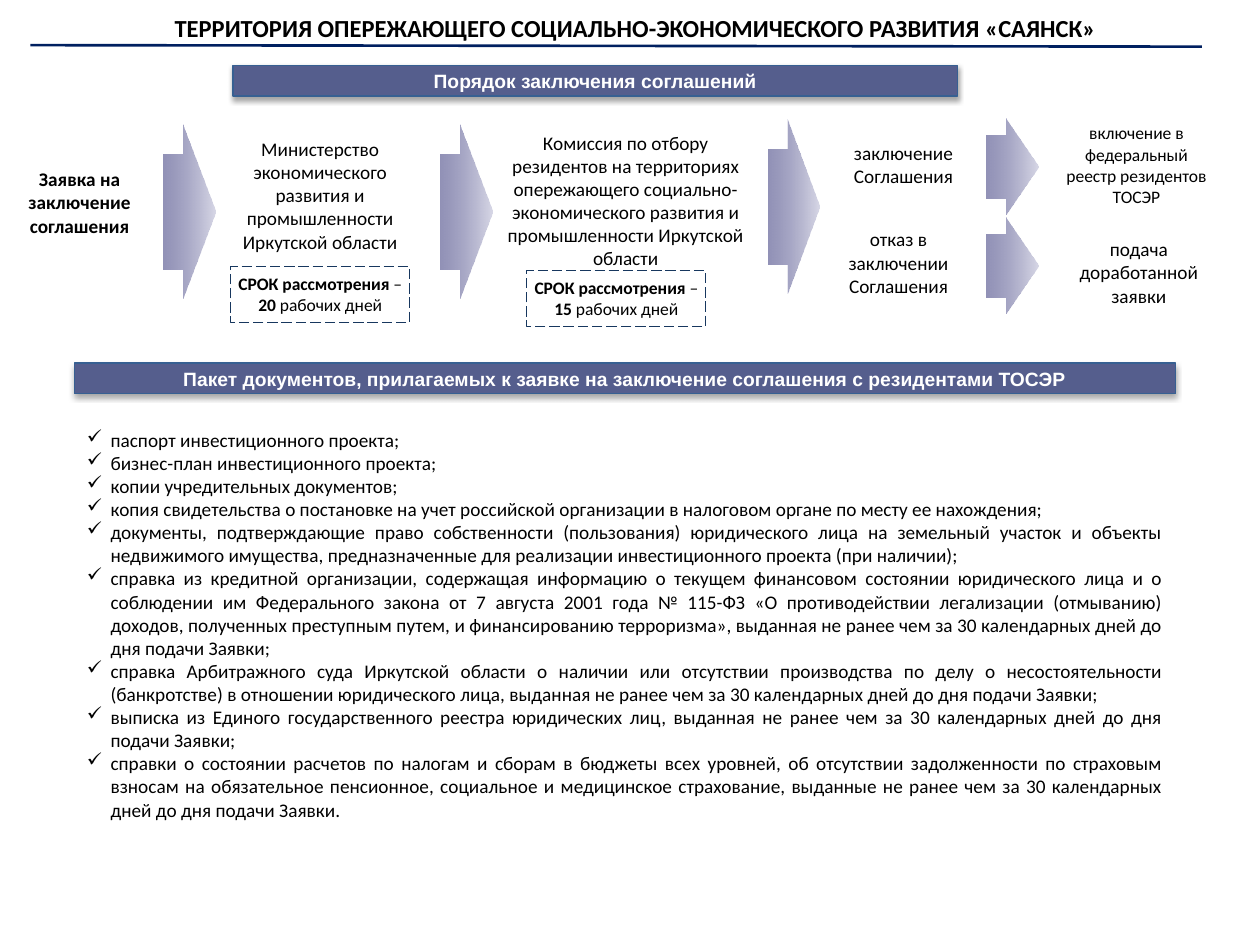
from dataclasses import dataclass

from lxml.etree import SubElement
from pptx import Presentation
from pptx.dml.color import RGBColor
from pptx.enum.dml import MSO_LINE
from pptx.enum.shapes import MSO_CONNECTOR, MSO_SHAPE
from pptx.enum.text import MSO_ANCHOR, PP_ALIGN
from pptx.oxml.ns import qn
from pptx.util import Cm, Pt


@dataclass(frozen=True)
class Theme:
    body_font: str = "Calibri"
    banner_font: str = "Arial"
    text: RGBColor = RGBColor(0x00, 0x00, 0x00)
    white: RGBColor = RGBColor(0xFF, 0xFF, 0xFF)
    rule: RGBColor = RGBColor(0x00, 0x20, 0x60)
    banner: RGBColor = RGBColor(0x55, 0x5E, 0x8D)
    banner_line: RGBColor = RGBColor(0x37, 0x60, 0x92)
    deadline_line: RGBColor = RGBColor(0x17, 0x37, 0x5E)
    arrow_start: RGBColor = RGBColor(0x24, 0x24, 0x6E)
    arrow_end: RGBColor = RGBColor(0xC7, 0xC7, 0xDC)
    title_size: Pt = Pt(14)
    body_size: Pt = Pt(11)
    small_size: Pt = Pt(10)


theme = Theme()
plain = {"name": theme.body_font, "size": theme.body_size, "bold": False}
bold = {**plain, "bold": True}
small = {**plain, "size": theme.small_size}
small_bold = {**small, "bold": True}
title_format = {**bold, "size": theme.title_size}
banner_format = {**bold, "name": theme.banner_font}


def add_run(paragraph, text, font_format, color=theme.text):
    run = paragraph.add_run()
    run.text = text
    for name, value in font_format.items():
        setattr(run.font, name, value)
    run.font.color.rgb = color


def set_frame(shape, anchor=MSO_ANCHOR.TOP, side=0.25, wrap=True):
    frame_format = {
        "word_wrap": wrap, "vertical_anchor": anchor,
        "margin_left": Cm(side), "margin_right": Cm(side),
        "margin_top": Cm(0.13), "margin_bottom": Cm(0.13),
    }
    for name, value in frame_format.items():
        setattr(shape.text_frame, name, value)
    paragraph = shape.text_frame.paragraphs[0]
    paragraph.alignment = PP_ALIGN.CENTER
    return paragraph


presentation = Presentation()
presentation.slide_width = Cm(25.4)
presentation.slide_height = Cm(19.05)
slide = presentation.slides.add_slide(presentation.slide_layouts[6])
shapes = slide.shapes

# Rule under the title
rule = shapes.add_connector(MSO_CONNECTOR.STRAIGHT, Cm(0.61), Cm(0.91), Cm(24.23), Cm(0.94))
rule.line.color.rgb = theme.rule
rule.line.width = Pt(1.5)
SubElement(rule.element.spPr, qn("a:effectLst"))

# Title and process steps: text, left, top, width, height, format, anchor, side inset
TOP, MIDDLE = MSO_ANCHOR.TOP, MSO_ANCHOR.MIDDLE
labels = [
    ("ТЕРРИТОРИЯ ОПЕРЕЖАЮЩЕГО СОЦИАЛЬНО-ЭКОНОМИЧЕСКОГО РАЗВИТИЯ «САЯНСК»",
     0.71, 0.13, 24.21, 0.86, title_format, TOP, 0.25),
    ("Заявка на заключение соглашения", -0.3, 3.25, 3.81, 1.68, bold, TOP, 0.1),
    ("Министерство экономического развития и промышленности Иркутской области",
     4.65, 2.64, 3.61, 2.62, plain, TOP, 0.1),
    ("Комиссия по отбору резидентов на территориях опережающего "
     "социально-экономического развития и промышленности Иркутской области",
     9.91, 2.51, 5.41, 3.07, plain, TOP, 0.25),
    ("заключение Соглашения", 16.31, 2.72, 3.81, 1.19, plain, MIDDLE, 0.25),
    ("отказ в заключении Соглашения", 16.31, 4.45, 3.61, 1.68, plain, MIDDLE, 0.25),
    ("включение в федеральный реестр резидентов ТОСЭР",
     21.31, 2.34, 3.2, 1.96, small, TOP, 0.1),
    ("подача доработанной заявки", 21.31, 4.65, 3.3, 1.68, plain, MIDDLE, 0.25),
]
for text, left, top, width, height, font_format, anchor, side in labels:
    label = shapes.add_textbox(Cm(left), Cm(top), Cm(width), Cm(height))
    add_run(set_frame(label, anchor, side), text, font_format)

# Section banners with a soft shadow
banners = [
    ("Порядок заключения соглашений", 4.7, 1.32, 14.6),
    ("Пакет документов, прилагаемых к заявке на заключение соглашения с резидентами ТОСЭР",
     1.5, 7.32, 22.2),
]
for text, left, top, width in banners:
    banner = shapes.add_shape(MSO_SHAPE.RECTANGLE, Cm(left), Cm(top), Cm(width), Cm(0.62))
    banner.fill.solid()
    banner.fill.fore_color.rgb = theme.banner
    banner.line.color.rgb = theme.banner_line
    banner.line.width = Pt(0.75)
    banner.shadow.inherit = False
    effects = banner.element.spPr.find(qn("a:effectLst"))
    shadow = SubElement(effects, qn("a:outerShdw"), blurRad=str(Pt(3.1)), dist=str(Pt(1.8)),
                        dir="5400000", rotWithShape="0")
    shadow_color = SubElement(shadow, qn("a:srgbClr"), val=str(theme.text))
    SubElement(shadow_color, qn("a:alpha"), val="35000")
    add_run(set_frame(banner, MIDDLE, wrap=False), text, banner_format, theme.white)

# Process arrows: left, top, height
arrows = [(3.3, 2.51, 3.5), (8.89, 2.51, 3.5), (15.49, 2.41, 3.5),
          (19.89, 2.39, 1.93), (19.89, 4.39, 1.93)]
for left, top, height in arrows:
    arrow = shapes.add_shape(MSO_SHAPE.RIGHT_ARROW, Cm(left), Cm(top), Cm(1.04), Cm(height))
    arrow.adjustments[0] = 0.66
    arrow.adjustments[1] = 0.63
    arrow.shadow.inherit = False
    arrow.line.fill.background()
    arrow.fill.gradient()
    arrow.fill.gradient_angle = 0
    stops = zip(arrow.fill.gradient_stops, (0, 1),
                (theme.arrow_start, theme.arrow_end), ("50000", "71000"))
    for stop, position, color, opacity in stops:
        stop.position = position
        stop.color.rgb = color
    for color_element, opacity in zip(arrow.element.spPr.iter(qn("a:srgbClr")), ("50000", "71000")):
        SubElement(color_element, qn("a:alpha"), val=opacity)

# Review deadlines
for left, top, days in [(4.65, 5.38, "20"), (10.62, 5.46, "15")]:
    deadline = shapes.add_shape(MSO_SHAPE.RECTANGLE, Cm(left), Cm(top), Cm(3.61), Cm(1.12))
    deadline.shadow.inherit = False
    deadline.fill.background()
    deadline.line.color.rgb = theme.deadline_line
    deadline.line.width = Pt(0.75)
    deadline.line.dash_style = MSO_LINE.LONG_DASH
    paragraph = set_frame(deadline, side=0.1)
    for text, font_format in [("СРОК рассмотрения ", small_bold), ("– ", small),
                              (days, small_bold), (" рабочих дней", small)]:
        add_run(paragraph, text, font_format)

# Document checklist
documents = [
    "паспорт инвестиционного проекта;",
    "бизнес-план инвестиционного проекта;",
    "копии учредительных документов;",
    "копия свидетельства о постановке на учет российской организации в налоговом органе "
    "по месту ее нахождения;",
    "документы, подтверждающие право собственности (пользования) юридического лица на "
    "земельный участок и объекты недвижимого имущества, предназначенные для реализации "
    "инвестиционного проекта (при наличии);",
    "справка из кредитной организации, содержащая информацию о текущем финансовом состоянии "
    "юридического лица и о соблюдении им Федерального закона от 7 августа 2001 года № 115-ФЗ "
    "«О противодействии легализации (отмыванию) доходов, полученных преступным путем, и "
    "финансированию терроризма», выданная не ранее чем за 30 календарных дней до дня подачи Заявки;",
    "справка Арбитражного суда Иркутской области о наличии или отсутствии производства по делу "
    "о несостоятельности (банкротстве) в отношении юридического лица, выданная не ранее чем "
    "за 30 календарных дней до дня подачи Заявки;",
    "выписка из Единого государственного реестра юридических лиц, выданная не ранее чем "
    "за 30 календарных дней до дня подачи Заявки;",
    "справки о состоянии расчетов по налогам и сборам в бюджеты всех уровней, об отсутствии "
    "задолженности по страховым взносам на обязательное пенсионное, социальное и медицинское "
    "страхование, выданные не ранее чем за 30 календарных дней до дня подачи Заявки.",
]
checklist = shapes.add_textbox(Cm(1.5), Cm(8.46), Cm(22.2), Cm(8.26))
paragraph = set_frame(checklist, MIDDLE)
for index, document in enumerate(documents):
    if index:
        paragraph = checklist.text_frame.add_paragraph()
    paragraph.alignment = PP_ALIGN.JUSTIFY
    properties = paragraph._p.get_or_add_pPr()
    properties.set("marL", str(Cm(0.48)))
    properties.set("indent", str(-Cm(0.48)))
    SubElement(properties, qn("a:buChar"), char="✓")
    add_run(paragraph, document, plain)

presentation.save("out.pptx")
